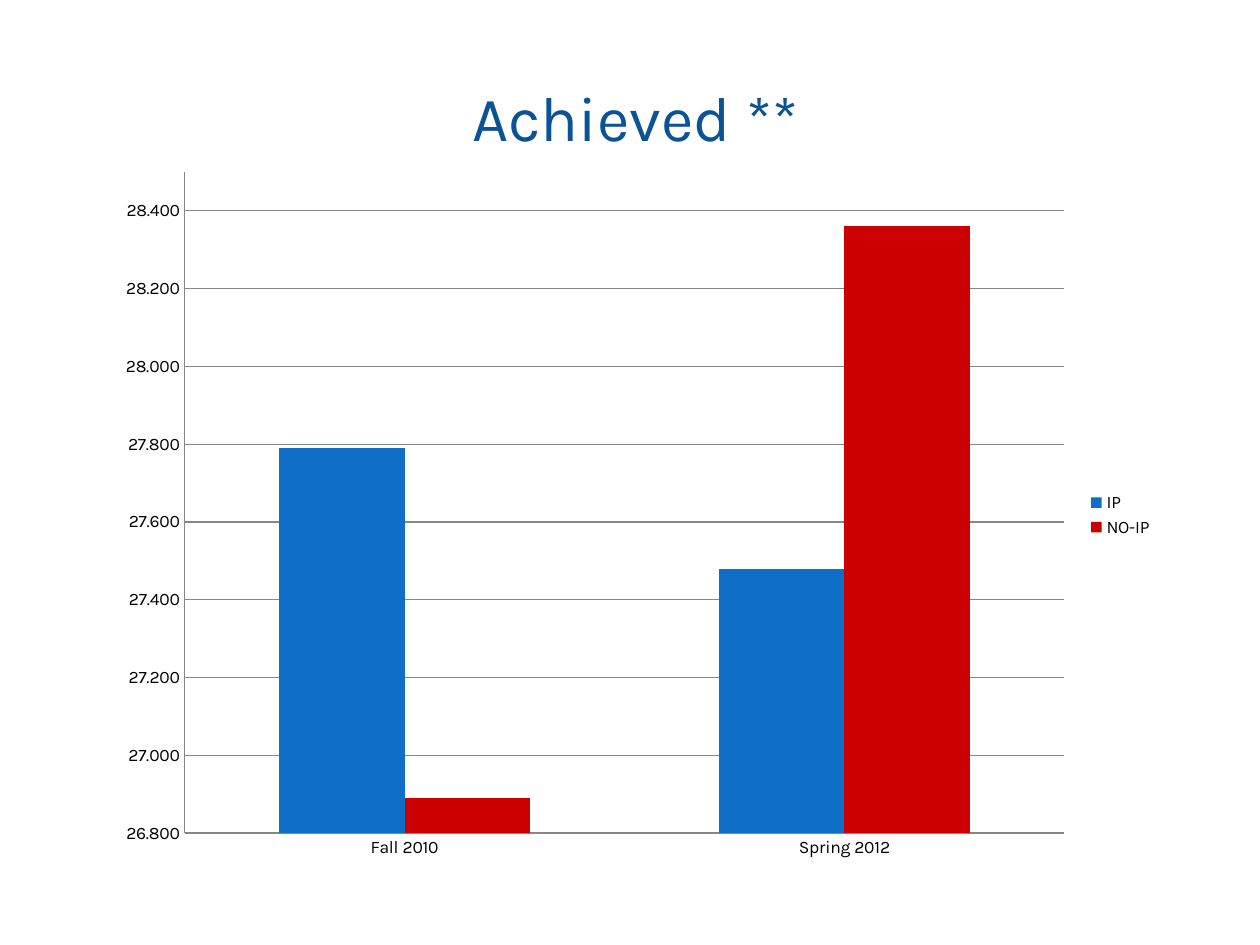
from dataclasses import dataclass

from pptx import Presentation
from pptx.chart.data import CategoryChartData
from pptx.dml.color import RGBColor
from pptx.enum.chart import XL_CHART_TYPE, XL_LEGEND_POSITION, XL_TICK_MARK
from pptx.enum.text import MSO_ANCHOR, PP_ALIGN
from pptx.util import Cm, Pt

COLUMN = XL_CHART_TYPE.COLUMN_CLUSTERED
LEGEND_RIGHT = XL_LEGEND_POSITION.RIGHT
NO_TICK = XL_TICK_MARK.NONE
MIDDLE = MSO_ANCHOR.MIDDLE
CENTER = PP_ALIGN.CENTER


@dataclass(frozen=True)
class Theme:
    font: str = "Karla"
    title_size: int = 36
    chart_size: int = 10
    title: str = "0B5394"
    text: str = "000000"
    line: str = "878787"
    series: tuple = ("0F6FC6", "CC0000")


THEME = Theme()
CATEGORIES = ("Fall 2010", "Spring 2012")
SERIES = {"IP": (27.79, 27.48), "NO-IP": (26.89, 28.36)}


def apply(obj, values):
    for name, value in values.items():
        setattr(obj, name, value)


def style_font(font, size, color):
    apply(font, {"name": THEME.font, "size": Pt(size), "bold": False})
    font.color.rgb = RGBColor.from_string(color)


def style_line(line):
    line.width = Pt(0.75)
    line.color.rgb = RGBColor.from_string(THEME.line)


def add_title(s, text, left, top, width, height):
    sp = s.shapes.title
    apply(sp, {"left": left, "top": top, "width": width, "height": height})
    tf = sp.text_frame
    apply(tf, {"vertical_anchor": MIDDLE, "word_wrap": True})
    p = tf.paragraphs[0]
    p.alignment = CENTER
    r = p.add_run()
    r.text = text
    style_font(r.font, THEME.title_size, THEME.title)


def add_column_chart(s, left, top, width, height):
    data = CategoryChartData(number_format="####.000")
    data.categories = CATEGORIES
    for name, values in SERIES.items():
        data.add_series(name, values)
    chart = s.shapes.add_chart(COLUMN, left, top, width, height, data).chart
    apply(chart, {"has_title": False, "has_legend": True})
    style_font(chart.font, THEME.chart_size, THEME.text)
    apply(chart.legend, {"position": LEGEND_RIGHT, "include_in_layout": False})

    plot = chart.plots[0]
    apply(plot, {"gap_width": 150, "overlap": 0, "vary_by_categories": False})
    for series, color in zip(plot.series, THEME.series):
        series.invert_if_negative = False
        series.format.fill.solid()
        series.format.fill.fore_color.rgb = RGBColor.from_string(color)

    for axis in (chart.category_axis, chart.value_axis):
        apply(axis, {"major_tick_mark": NO_TICK, "minor_tick_mark": NO_TICK})
        style_line(axis.format.line)
    axis = chart.value_axis
    apply(axis, {
        "minimum_scale": 26.8,
        "maximum_scale": 28.5,
        "major_unit": 0.2,
        "has_major_gridlines": True,
    })
    style_line(axis.major_gridlines.format.line)
    apply(axis.tick_labels, {
        "number_format": "####.000",
        "number_format_is_linked": False,
    })


def main():
    prs = Presentation()
    apply(prs, {"slide_width": Cm(25.4), "slide_height": Cm(19.05)})
    s = prs.slides.add_slide(prs.slide_layouts[5])
    left, width = Cm(2.11), Cm(21.39)
    add_title(s, "Achieved **", left, Cm(1.7), width, Cm(1.27))
    add_column_chart(s, left, Cm(3.18), width, Cm(14.4))
    prs.save("out.pptx")


if __name__ == "__main__":
    main()
